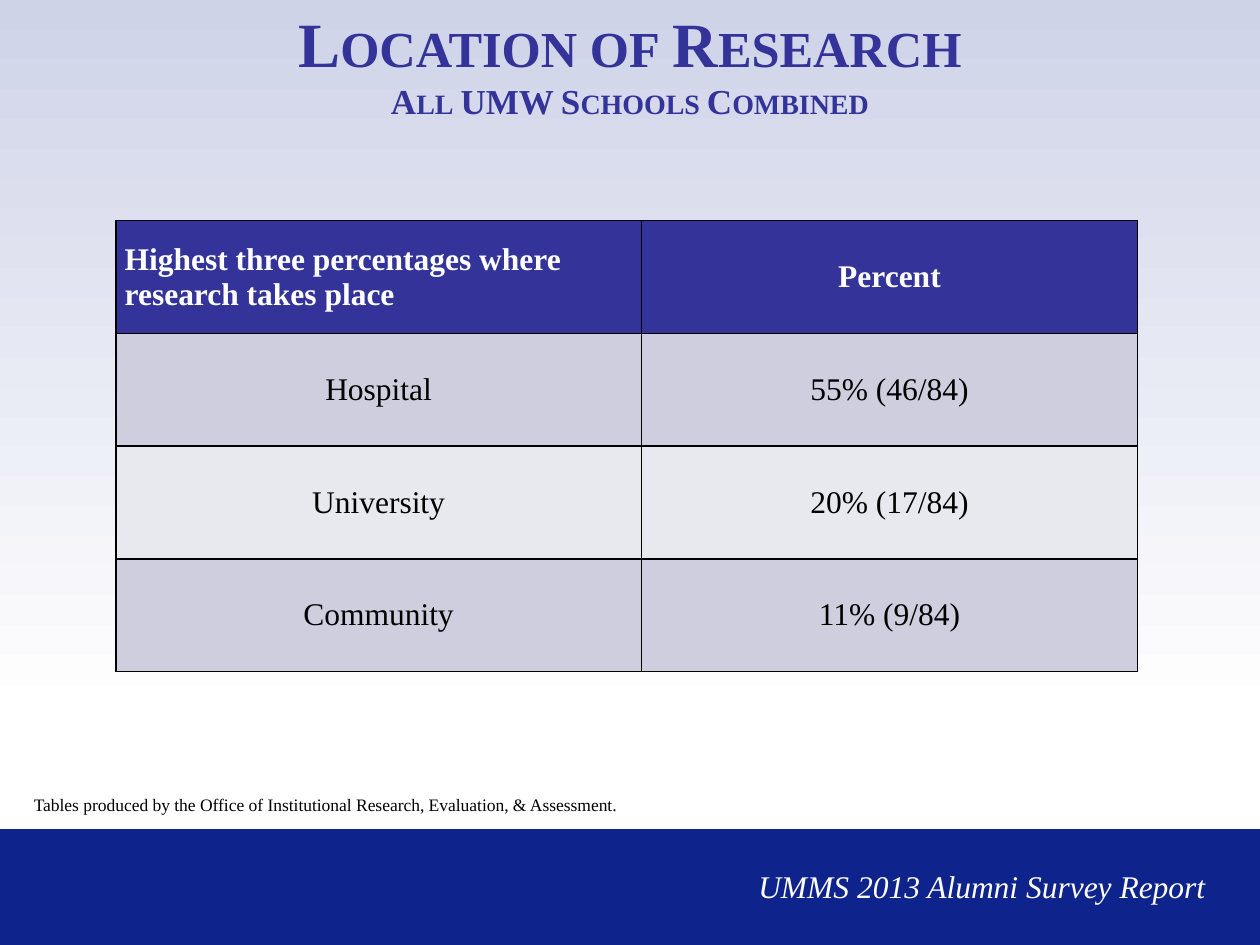
from lxml.etree import SubElement
from pptx import Presentation
from pptx.dml.color import RGBColor as RGB
from pptx.enum.shapes import MSO_SHAPE as Shape
from pptx.enum.text import MSO_ANCHOR as Anchor, MSO_AUTO_SIZE as Fit, PP_ALIGN as Align
from pptx.oxml.ns import qn
from pptx.util import Inches, Pt

THEME = {
    "font": "Times New Roman",
    "sky": "CFD3E8", "white": "FFFFFF", "black": "000000",
    "footer": "0F238C", "indigo": "333399",
    "bands": ["E8E8EF", "CECEDE"],
    "heading": 36, "subheading": 20, "body": 18, "note": 10,
}


def color(name):
    return RGB.from_string(THEME[name])


def write(para, text, size, ink, **formats):
    span = para.add_run()
    span.text = text
    span.font.color.rgb = color(ink)
    values = {"name": THEME["font"], "size": Pt(THEME[size]), "bold": False, **formats}
    for key, value in values.items():
        setattr(span.font, key, value)
    return span


deck = Presentation()
deck.slide_width, deck.slide_height = Inches(10), Inches(7.5)
page = deck.slides.add_slide(deck.slide_layouts[5])
shapes = page.shapes

backdrop = shapes.add_shape(Shape.RECTANGLE, 0, 0, Inches(10), Inches(5.67))
backdrop.fill.gradient()
backdrop.fill.gradient_angle = 270
for stop, name in zip(backdrop.fill.gradient_stops, ("sky", "white")):
    stop.color.rgb = color(name)
footer = shapes.add_shape(Shape.RECTANGLE, 0, Inches(6.58), Inches(10), Inches(0.92))
footer.fill.solid()
footer.fill.fore_color.rgb = color("footer")
for box in (backdrop, footer):
    box.shadow.inherit = False
    box.line.fill.background()

title = shapes.title
shapes._spTree.append(title._element)
title.left, title.top, title.width, title.height = 0, 0, Inches(10), Inches(1)
title.text_frame.auto_size = Fit.NONE
title.text_frame.vertical_anchor = Anchor.MIDDLE
para = title.text_frame.paragraphs[0]
para.alignment = Align.CENTER
heading = write(para, "Location of Research", "heading", "indigo", bold=True)
para.add_line_break()
subheading = write(para, "All UMW Schools Combined", "subheading", "indigo", bold=True)
for span in (heading, subheading):
    span.font._element.set("cap", "small")

rows = [
    ("Highest three percentages where research takes place", "Percent"),
    ("Hospital", "55% (46/84)"),
    ("University", "20% (17/84)"),
    ("Community", "11% (9/84)"),
]
table = shapes.add_table(len(rows), 2, Inches(0.92), Inches(1.75), Inches(8.11), Inches(3.58)).table
for column, width in zip(table.columns, (4.17, 3.94)):
    column.width = Inches(width)
for r, row in enumerate(rows):
    for c, text in enumerate(row):
        cell = table.cell(r, c)
        cell.vertical_anchor = Anchor.MIDDLE
        cell.margin_left = cell.margin_right = Inches(0.07)
        cell.margin_top = cell.margin_bottom = 0
        para = cell.text_frame.paragraphs[0]
        para.alignment = Align.LEFT if r == c == 0 else Align.CENTER
        write(para, text, "body", "black" if r else "white", bold=r == 0)
        props = cell._tc.get_or_add_tcPr()
        for side in ("lnL", "lnR", "lnT", "lnB"):
            border = SubElement(props, qn(f"a:{side}"), w=str(Pt(1)))
            fill = SubElement(border, qn("a:solidFill"))
            SubElement(fill, qn("a:srgbClr"), val=THEME["black"])
        cell.fill.solid()
        cell.fill.fore_color.rgb = RGB.from_string(THEME["bands"][r % 2]) if r else color("indigo")

captions = [
    ((0.17, 6.25, 7, 0.27), "Tables produced by the Office of Institutional Research, Evaluation, & Assessment.",
     "note", "black", False),
    ((5.92, 6.83, 3.83, 0.4), "UMMS 2013 Alumni Survey Report", "body", "white", True),
]
for place, text, size, ink, italic in captions:
    box = shapes.add_textbox(*map(Inches, place))
    box.text_frame.word_wrap = True
    box.text_frame.auto_size = Fit.SHAPE_TO_FIT_TEXT
    write(box.text_frame.paragraphs[0], text, size, ink, italic=italic)

deck.save("out.pptx")
